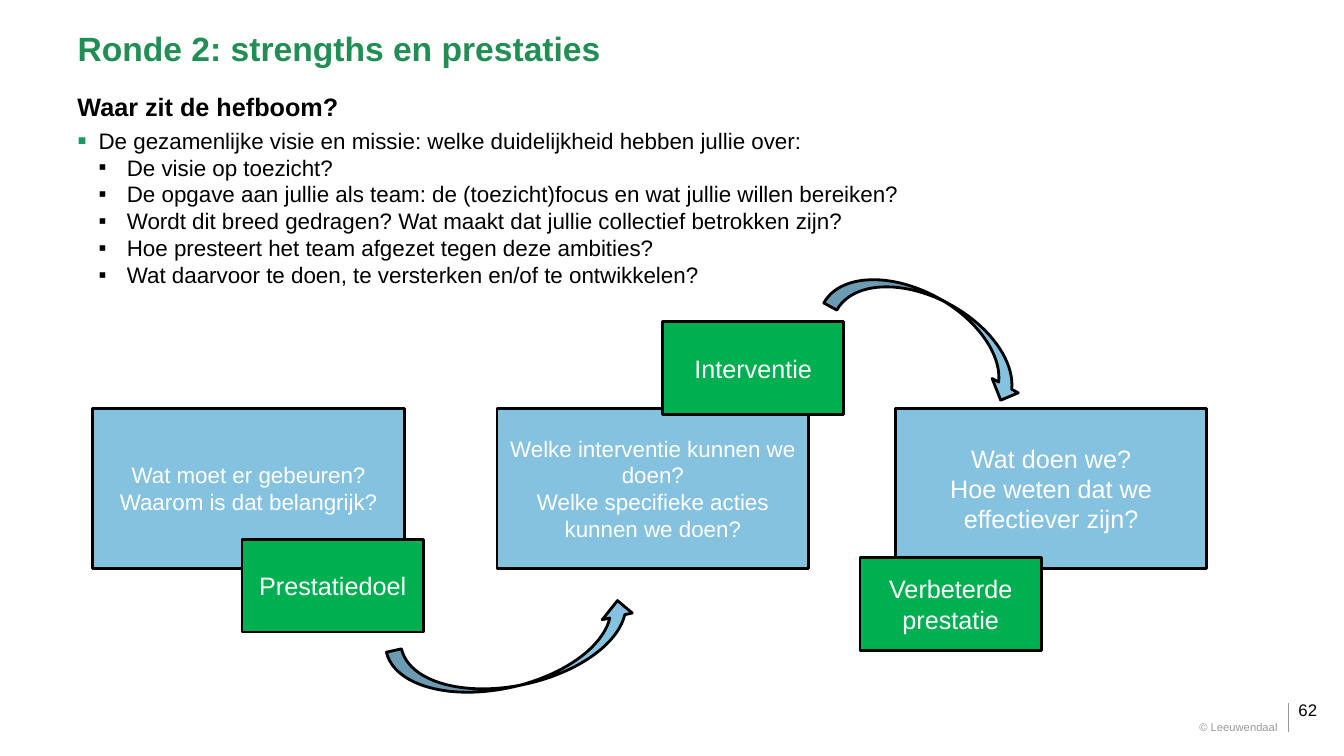
"""Build the slide on strengths and results with its three linked steps."""
from dataclasses import dataclass

import pptx
import pptx.dml.color
import pptx.enum.shapes
import pptx.enum.text
import pptx.oxml
import pptx.oxml.ns
import pptx.util

Inches = pptx.util.Inches
Pt = pptx.util.Pt
SHAPE = pptx.enum.shapes.MSO_SHAPE
ALIGN = pptx.enum.text.PP_ALIGN
ANCHOR = pptx.enum.text.MSO_ANCHOR
FIT = pptx.enum.text.MSO_AUTO_SIZE

HUES = {
    "title": "218F53", "bullet": "19975D", "step": "85C2E0", "label": "00B050",
    "ink": "000000", "white": "FFFFFF", "grey": "999999",
}


@dataclass
class Box:
    """A filled shape, with its text and turn."""
    left: float
    top: float
    width: float
    height: float
    hue: str
    text: str = ""
    size: int = 18
    kind: SHAPE = SHAPE.RECTANGLE
    turn: float = 0


@dataclass
class Note:
    """A plain text box."""
    left: float
    top: float
    width: float
    height: float
    text: str
    size: int
    hue: str = "ink"
    bold: bool = False
    align: ALIGN = ALIGN.LEFT
    pad: float = 0.05


def step(left: float, text: str, size: int = 16) -> Box:
    """Return a large blue step."""
    return Box(left, 4.05, 3.09, 1.59, "step", text, size)


def label(left: float, top: float, text: str) -> Box:
    """Return a small green label."""
    return Box(left, top, 1.8, 0.92, "label", text)


BOXES = [
    step(0.92, "Wat moet er gebeuren?\nWaarom is dat belangrijk?"),
    step(4.93, "Welke interventie kunnen we doen?\n"
               "Welke specifieke acties kunnen we doen?"),
    step(8.88, "Wat doen we?\nHoe weten dat we effectiever zijn?", 18),
    label(2.4, 5.35, "Prestatiedoel"),
    label(6.57, 3.19, "Interventie"),
    label(8.53, 5.53, "Verbeterde prestatie"),
    Box(3.87, 6.19, 2.5, 0.61, "step", kind=SHAPE.CURVED_UP_ARROW, turn=347.4),
    Box(8.18, 2.97, 2.15, 0.59, "step", kind=SHAPE.CURVED_DOWN_ARROW, turn=28.8),
]
POINTS = [
    "De gezamenlijke visie en missie: welke duidelijkheid hebben jullie over:",
    "De visie op toezicht?",
    "De opgave aan jullie als team: de (toezicht)focus en wat jullie willen bereiken?",
    "Wordt dit breed gedragen? Wat maakt dat jullie collectief betrokken zijn?",
    "Hoe presteert het team afgezet tegen deze ambities?",
    "Wat daarvoor te doen, te versterken en/of te ontwikkelen?",
]
LIST = Note(0.67, 1.21, 12, 1.76, "\n".join(POINTS), 16)
NOTES = [
    Note(0.67, 0.86, 2.82, 0.4, "Waar zit de hefboom?", 18, bold=True),
    Note(12.78, 6.94, 0.55, 0.2, "62", 12, pad=0),
    Note(11.15, 7.15, 1.62, 0.13, "© Leeuwendaal", 8, "grey",
         align=ALIGN.RIGHT, pad=0),
]


def rgb(hue: str) -> pptx.dml.color.RGBColor:
    """Look up a colour by name."""
    return pptx.dml.color.RGBColor.from_string(HUES[hue])


def place(shape, left: float, top: float, width: float, height: float) -> None:
    """Set the place and size of a shape."""
    shape.left, shape.top = Inches(left), Inches(top)
    shape.width, shape.height = Inches(width), Inches(height)


def style(frame, size: int, hue: str, align: ALIGN, bold: bool = False) -> None:
    """Format all text in a frame."""
    for para in frame.paragraphs:
        para.alignment = align
        for run in para.runs:
            run.font.name = "Arial"
            run.font.size = Pt(size)
            run.font.bold = bold
            run.font.color.rgb = rgb(hue)


def head(slide, text: str) -> None:
    """Fill and format the title."""
    title = slide.shapes.title
    place(title, 0.67, 0.23, 12.22, 0.5)
    frame = title.text_frame
    frame.text = text
    frame.auto_size = FIT.NONE
    frame.vertical_anchor = ANCHOR.MIDDLE
    style(frame, 24, "title", ALIGN.LEFT, True)


def draw(slide, box: Box) -> None:
    """Draw a filled shape."""
    shape = slide.shapes.add_shape(
        box.kind, Inches(box.left), Inches(box.top),
        Inches(box.width), Inches(box.height))
    shape.rotation = box.turn
    shape.shadow.inherit = False
    shape.fill.solid()
    shape.fill.fore_color.rgb = rgb(box.hue)
    shape.line.color.rgb = rgb("ink")
    shape.line.width = Pt(2)
    if box.text:
        frame = shape.text_frame
        frame.text = box.text
        frame.word_wrap = True
        frame.vertical_anchor = ANCHOR.MIDDLE
        style(frame, box.size, "white", ALIGN.CENTER)


def write(slide, note: Note):
    """Write a text box and return its frame."""
    shape = slide.shapes.add_textbox(
        Inches(note.left), Inches(note.top),
        Inches(note.width), Inches(note.height))
    frame = shape.text_frame
    frame.text = note.text
    frame.word_wrap = True
    frame.margin_top = frame.margin_bottom = Inches(note.pad)
    style(frame, note.size, note.hue, note.align, note.bold)
    return frame


def mark(para, hue: str, left: float, hang: float, scale: int) -> None:
    """Give a paragraph a square bullet."""
    props = para._p.get_or_add_pPr()
    props.set("marL", str(Inches(left)))
    props.set("indent", str(-Inches(hang)))
    space = pptx.oxml.ns.nsdecls("a")
    for part in (
        f'<a:buClr {space}><a:srgbClr val="{HUES[hue]}"/></a:buClr>',
        f'<a:buSzPct {space} val="{scale * 1000}"/>',
        f'<a:buFont {space} typeface="Arial"/>',
        f'<a:buChar {space} char="▪"/>',
    ):
        props.append(pptx.oxml.parse_xml(part))


def rule(slide) -> None:
    """Draw the thin line beside the page number."""
    line = slide.shapes.add_connector(
        pptx.enum.shapes.MSO_CONNECTOR.STRAIGHT,
        Inches(12.78), Inches(6.97), Inches(12.78), Inches(7.26))
    line.line.color.rgb = rgb("grey")
    line.line.width = Pt(0.75)
    props = line._element.spPr
    props.append(props.makeelement(pptx.oxml.ns.qn("a:effectLst"), {}))


def main() -> None:
    """Build and save the deck."""
    deck = pptx.Presentation()
    deck.slide_width, deck.slide_height = Inches(13.33), Inches(7.5)
    slide = deck.slides.add_slide(deck.slide_layouts.get_by_name("Title Only"))
    head(slide, "Ronde 2: strengths en prestaties")
    for box in BOXES:
        draw(slide, box)
    for note in NOTES:
        write(slide, note)
    first, *rest = write(slide, LIST).paragraphs
    mark(first, "bullet", 0.21, 0.21, 120)
    for para in rest:
        para.level = 1
        mark(para, "ink", 0.49, 0.28, 100)
    rule(slide)
    deck.save("out.pptx")


if __name__ == "__main__":
    main()
